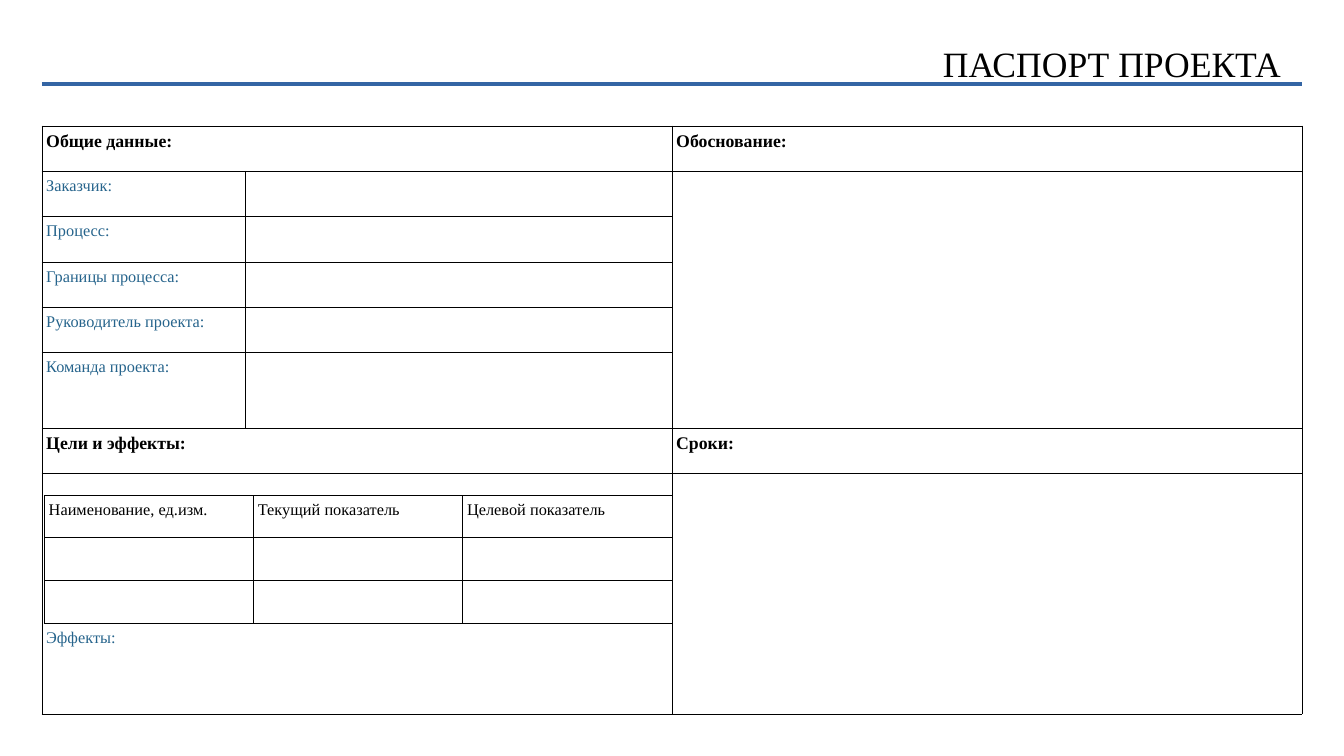
"""Build the project passport slide with its main form and nested indicator table."""
from lxml import etree
from pptx import Presentation
from pptx import util as u
from pptx.dml.color import RGBColor
from pptx.enum import shapes, text
from pptx.oxml.ns import qn

BLACK = RGBColor(0x00, 0x00, 0x00)
LABEL_BLUE = RGBColor(0x26, 0x64, 0x8C)
RULE_BLUE = RGBColor(0x34, 0x65, 0xA4)
FONT = "Times New Roman"

TITLE = "ПАСПОРТ ПРОЕКТА"
PASSPORT_ROWS = [
    ("Общие данные:", "", "Обоснование:"),
    ("Заказчик:", "", ""),
    ("Процесс:", "", ""),
    ("Границы процесса:", "", ""),
    ("Руководитель проекта:", "", ""),
    ("Команда проекта:", "", ""),
    ("Цели и эффекты:", "", "Сроки:"),
    ("Эффекты:", "", ""),
]
HEADING_ROWS = (0, 6)
EFFECTS_ROW = 7
MERGES = [((0, 0), (0, 1)), ((1, 2), (5, 2)), ((6, 0), (6, 1)), ((7, 0), (7, 1))]
INDICATOR_ROWS = [
    ("Наименование, ед.изм.", "Текущий показатель", "Целевой показатель"),
    ("", "", ""),
    ("", "", ""),
]

PASSPORT_COLUMNS = [4.84, 10.16, 15]
PASSPORT_HEIGHTS = [1.08] * 5 + [1.8, 1.08, 5.72]
INDICATOR_COLUMNS = [4.98] * 3
INDICATOR_HEIGHTS = [1] * 3

TITLE_FORMAT = {"name": FONT, "size": u.Pt(24), "bold": False}
HEADING_FORMAT = {"name": FONT, "size": u.Pt(12), "bold": True}
BODY_FORMAT = {"name": FONT, "size": u.Pt(11), "bold": False}
CELL_MARGINS = {"margin_left": 0.1, "margin_right": 0.1, "margin_top": 0.13, "margin_bottom": 0.13}
EFFECTS_TOP = 3.69


def write(paragraph, words, font_format, color):
    run = paragraph.add_run()
    run.text = words
    for name, value in font_format.items():
        setattr(run.font, name, value)
    run.font.color.rgb = color


def add_borders(cell):
    properties = cell._tc.get_or_add_tcPr()
    for position, side in enumerate(("lnL", "lnR", "lnT", "lnB")):
        line = etree.Element(qn(f"a:{side}"), w=str(u.Pt(0.57)))
        fill = etree.SubElement(line, qn("a:solidFill"))
        etree.SubElement(fill, qn("a:srgbClr"), val=str(BLACK))
        properties.insert(position, line)


def add_grid(slide, left, top, columns, heights):
    frame = slide.shapes.add_table(
        len(heights), len(columns), u.Cm(left), u.Cm(top), u.Cm(sum(columns)), u.Cm(sum(heights)))
    table = frame.table
    table.first_row = table.horz_banding = False
    for column, width in zip(table.columns, columns):
        column.width = u.Cm(width)
    for row, height in zip(table.rows, heights):
        row.height = u.Cm(height)
    for cell in table.iter_cells():
        cell.fill.background()
        add_borders(cell)
        for name, value in CELL_MARGINS.items():
            setattr(cell, name, u.Cm(value))
    return table


def fill_grid(table, rows, choose_format):
    for row_index, row in enumerate(rows):
        font_format, color = choose_format(row_index)
        for column_index, words in enumerate(row):
            if words:
                cell = table.cell(row_index, column_index)
                write(cell.text_frame.paragraphs[0], words, font_format, color)


def passport_format(row_index):
    if row_index in HEADING_ROWS:
        return HEADING_FORMAT, BLACK
    return BODY_FORMAT, LABEL_BLUE


def indicator_format(row_index):
    return BODY_FORMAT, BLACK


def add_title(slide):
    rule = slide.shapes.add_connector(
        shapes.MSO_CONNECTOR.STRAIGHT, u.Cm(1), u.Cm(2), u.Cm(31), u.Cm(2))
    rule.line.color.rgb = RULE_BLUE
    rule.line.width = u.Pt(3)
    etree.SubElement(rule._element.spPr, qn("a:effectLst"))

    frame = slide.shapes.add_textbox(u.Cm(1.7), u.Cm(0), u.Cm(28.8), u.Cm(3)).text_frame
    frame.word_wrap = True
    frame.vertical_anchor = text.MSO_ANCHOR.MIDDLE
    for name in CELL_MARGINS:
        setattr(frame, name, 0)
    paragraph = frame.paragraphs[0]
    paragraph.alignment = text.PP_ALIGN.RIGHT
    write(paragraph, TITLE, TITLE_FORMAT, BLACK)


def main():
    presentation = Presentation()
    presentation.slide_width, presentation.slide_height = u.Cm(32), u.Cm(18)
    slide = presentation.slides.add_slide(presentation.slide_layouts[6])
    add_title(slide)

    passport = add_grid(slide, 1, 3, PASSPORT_COLUMNS, PASSPORT_HEIGHTS)
    for start, end in MERGES:
        passport.cell(*start).merge(passport.cell(*end))
    fill_grid(passport, PASSPORT_ROWS, passport_format)
    passport.cell(EFFECTS_ROW, 0).margin_top = u.Cm(EFFECTS_TOP)

    indicators = add_grid(slide, 1.06, 11.8, INDICATOR_COLUMNS, INDICATOR_HEIGHTS)
    fill_grid(indicators, INDICATOR_ROWS, indicator_format)
    presentation.save("out.pptx")


if __name__ == "__main__":
    main()
